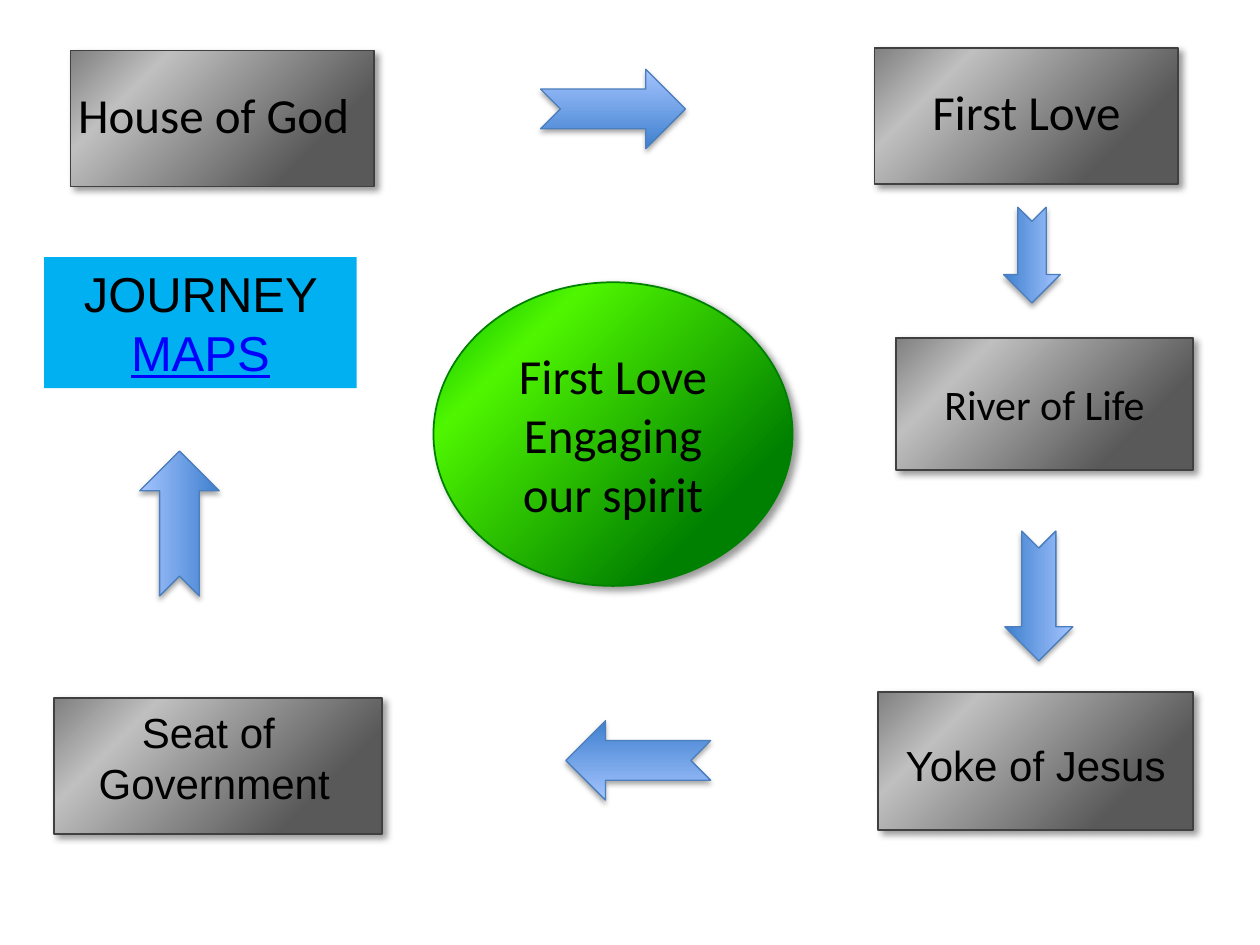
import pptx
import pptx.util
import pptx.dml.color
import pptx.enum.shapes
import pptx.enum.text
import pptx.oxml.ns
from lxml import etree

Inches, Pt = pptx.util.Inches, pptx.util.Pt
MSO = pptx.enum.shapes.MSO_SHAPE
ANCHOR = pptx.enum.text.MSO_ANCHOR
qn = pptx.oxml.ns.qn

GREY = [(22, "595959"), (77, "BFBFBF"), (100, "808080")]
GREEN = [(22, "008000"), (77, "4FF600"), (100, "00B300")]
BLUE = [(0, "3F80CE"), (100, "A4C4FF")]
# Shadows: opacity %, blur pt, distance pt, direction in degrees
DIAGONAL = (40, 4, 3, 45)
BELOW = (35, 3.1, 1.8, 90)


def rgb(color):
    return pptx.dml.color.RGBColor.from_string(color)


def add_color(parent, color):
    return etree.SubElement(parent, qn("a:srgbClr"), val=color)


def set_gradient(sp, stops, angle):
    sp.fill.gradient()
    grad = sp._element.spPr.find(qn("a:gradFill"))
    stop_list = grad.find(qn("a:gsLst"))
    for old in list(stop_list):
        stop_list.remove(old)
    for pos, color in stops:
        add_color(etree.SubElement(stop_list, qn("a:gs"), pos=str(pos * 1000)), color)
    grad.find(qn("a:lin")).set("ang", str(angle * 60000))


def set_shadow(sp, opacity, blur, distance, direction):
    sp.shadow.inherit = False
    effects = sp._element.spPr.find(qn("a:effectLst"))
    outer = etree.SubElement(
        effects, qn("a:outerShdw"), blurRad=str(Pt(blur)), dist=str(Pt(distance)),
        dir=str(direction * 60000), algn="tl", rotWithShape="0")
    black = add_color(outer, "000000")
    etree.SubElement(black, qn("a:alpha"), val=str(opacity * 1000))


def add_shape(shapes, kind, box, stops, angle, line, width, shadow):
    sp = shapes.add_shape(kind, *map(Inches, box))
    set_gradient(sp, stops, angle)
    sp.line.color.rgb = rgb(line)
    sp.line.width = Pt(width)
    set_shadow(sp, *shadow)
    return sp


def format_run(r, size, font, color="000000"):
    r.font.size = Pt(size)
    r.font.name = font
    r.font.color.rgb = rgb(color)


def set_text(sp, text, size, font, anchor=ANCHOR.TOP, inset=True):
    tf = sp.text_frame
    tf.text = text
    tf.word_wrap = True
    tf.vertical_anchor = anchor
    if not inset:
        tf.margin_left = tf.margin_right = tf.margin_top = tf.margin_bottom = 0
    for p in tf.paragraphs:
        p.alignment = pptx.enum.text.PP_ALIGN.CENTER
        for r in p.runs:
            format_run(r, size, font)


def add_grey_box(shapes, box):
    return add_shape(shapes, MSO.RECTANGLE, box, GREY, 225, "404040", 1, DIAGONAL)


def add_labelled_box(slide, box, label_box, text, size, font):
    group = slide.shapes.add_group_shape()
    add_grey_box(group.shapes, box)
    label = group.shapes.add_textbox(*map(Inches, label_box))
    set_text(label, text, size, font, inset=False)


def add_arrow(slide, box, rotation):
    sp = add_shape(slide.shapes, MSO.NOTCHED_RIGHT_ARROW, box, BLUE, 270,
                   "4B7EBC", 0.75, BELOW)
    sp.rotation = rotation


def add_journey_maps(slide):
    sp = slide.shapes.add_shape(MSO.RECTANGLE, *map(Inches, (0.35, 2.04, 2.48, 1.04)))
    sp.shadow.inherit = False
    sp.fill.solid()
    sp.fill.fore_color.rgb = rgb("00B0F0")
    sp.line.fill.background()
    set_text(sp, "JOURNEY ", 28, "Arial")
    r = sp.text_frame.paragraphs[0].add_run()
    r.text = "MAPS"
    format_run(r, 28, "Arial", "0000FF")
    r.font.underline = True


def main():
    prs = pptx.Presentation()
    prs.slide_width, prs.slide_height = Inches(10), Inches(7.5)
    slide = prs.slides.add_slide(prs.slide_layouts[6])

    # Stations around the edge
    for station in [
        ((0.56, 0.4, 2.41, 1.08), (0.57, 0.67, 2.25, 0.49), "House of God", 28, "Calibri"),
        ((6.94, 0.38, 2.41, 1.08), (7.02, 0.65, 2.25, 0.49), "First Love", 28, "Calibri"),
        ((6.97, 5.49, 2.5, 1.1), (6.97, 5.87, 2.5, 0.4), "Yoke of Jesus", 24, "Arial"),
        ((0.43, 5.54, 2.6, 1.08), (0.43, 5.61, 2.54, 0.81), "Seat of \vGovernment", 24, "Arial"),
    ]:
        add_labelled_box(slide, *station)
    river = add_grey_box(slide.shapes, (7.11, 2.68, 2.36, 1.05))
    set_text(river, "River of Life", 24, "Calibri", ANCHOR.MIDDLE)

    # Centre
    centre = add_shape(slide.shapes, MSO.OVAL, (3.44, 2.24, 2.85, 2.41), GREEN, 225,
                       "008000", 1, DIAGONAL)
    set_text(centre, "First Love\nEngaging our spirit", 28, "Calibri", ANCHOR.MIDDLE, False)

    add_journey_maps(slide)

    # Arrows, clockwise from the top
    for box, rotation in [
        ((4.29, 0.55, 1.15, 0.63), 0),
        ((7.81, 1.8, 0.76, 0.45), 90),
        ((7.73, 4.46, 1.03, 0.54), 90),
        ((4.49, 5.72, 1.15, 0.63), 180),
        ((0.85, 3.84, 1.15, 0.63), 270),
    ]:
        add_arrow(slide, box, rotation)

    prs.save("out.pptx")


if __name__ == "__main__":
    main()
